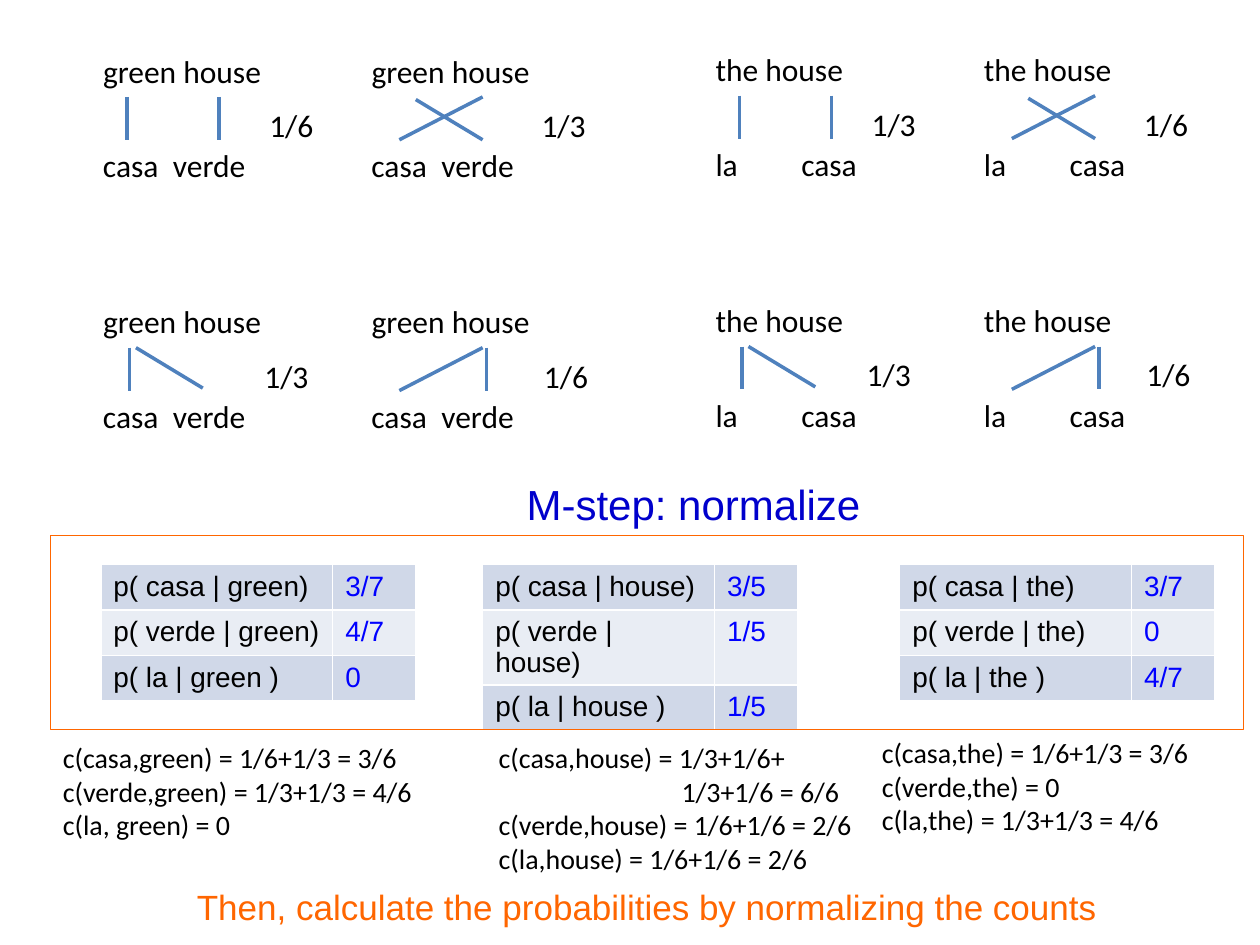
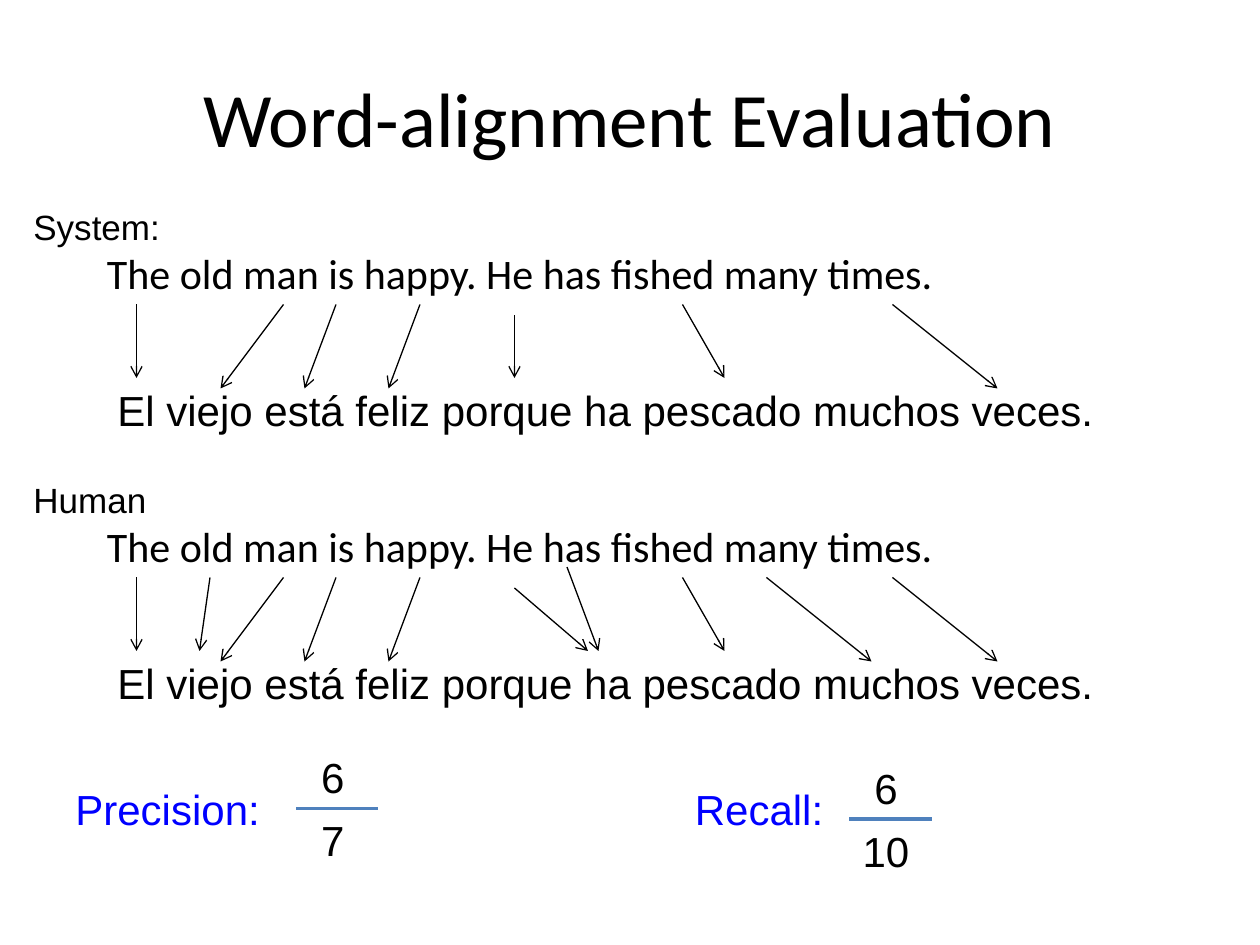
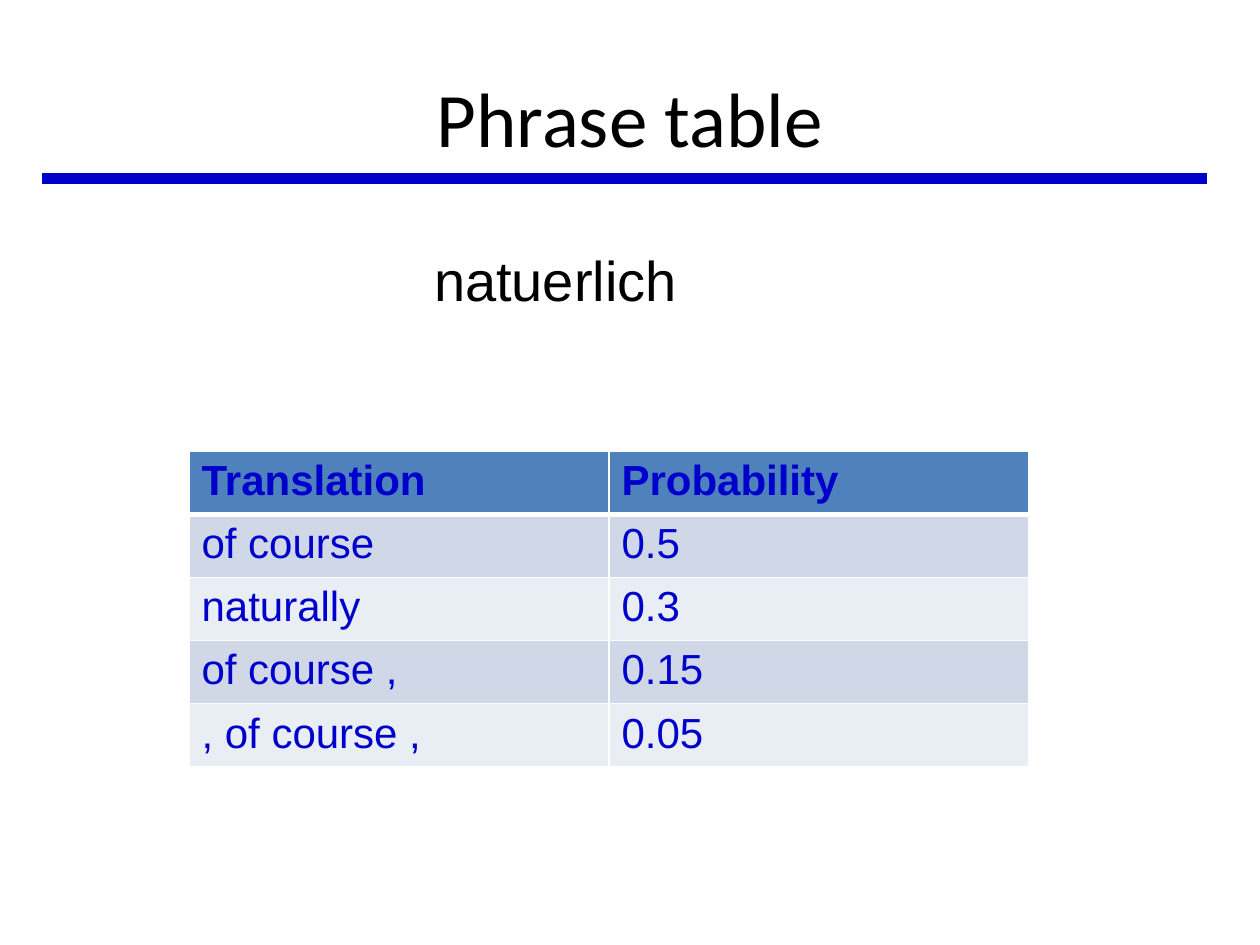
import dataclasses

import lxml.etree
import pptx
import pptx.dml.color
import pptx.enum.shapes
import pptx.enum.text
import pptx.oxml.ns
import pptx.util

Pt = pptx.util.Pt
Align = pptx.enum.text.PP_ALIGN
Anchor = pptx.enum.text.MSO_ANCHOR
qn = pptx.oxml.ns.qn


@dataclasses.dataclass(frozen=True)
class Theme:
    black: str = "000000"
    white: str = "FFFFFF"
    navy: str = "0000CC"
    blue: str = "0000FF"
    steel: str = "4F81BD"
    orange: str = "FF6600"
    bands: tuple = ("D0D8E8", "E9EDF4")
    sans: str = "Arial"
    body: str = "Calibri"
    title_size: int = 44
    term_size: int = 32
    large_size: int = 24
    label_size: int = 20
    word_size: int = 18
    small_size: int = 16


THEME = Theme()

# Each alignment: connecting lines, then the left offset of its probability
PARALLEL = [(20.9, 29.5, 20.9, 54), (73.4, 29.5, 73.4, 54)], 95
CROSSED = [(70.6, 29.5, 23, 54), (32.4, 31, 70.6, 54)], 97.2
FROM_FIRST = [(25.9, 29.5, 64.1, 52.6), (22.3, 29.5, 22.3, 54)], 92.2
FROM_SECOND = [(72.7, 29.5, 72.7, 54), (70.6, 29.5, 23, 54)], 98.6
ALIGNMENTS = [PARALLEL, CROSSED, FROM_FIRST, FROM_SECOND]

WORD_PAIRS = [
    dict(left=51.8, top=25.9, source="green house", source_width=110,
         target="casa\tverde", tab=40, shift=0,
         probabilities=["1/6", "1/3", "1/3", "1/6"]),
    dict(left=401.8, top=25.2, source="the house", source_width=88,
         target="la\tcasa", tab=49, shift=-5.8,
         probabilities=["1/3", "1/6", "1/3", "1/6"]),
]

PROBABILITY_TABLES = [
    (57.6, [("p( casa | green)", "3/7"), ("p( verde | green)", "4/7"),
            ("p( la | green )", "0")]),
    (275.8, [("p( casa | house)", "3/5"), ("p( verde | house)", "1/5"),
             ("p( la | house )", "1/5")]),
    (514.1, [("p( casa | the)", "3/7"), ("p( verde | the)", "0"),
             ("p( la | the )", "4/7")]),
]

COUNTS = [
    (28.8, 419.8, 224.6, "c(casa,green) = 1/6+1/3 = 3/6\n"
     "c(verde,green) = 1/3+1/3 = 4/6\nc(la, green) = 0"),
    (277.9, 419.8, 219, "c(casa,house) = 1/3+1/6+\n\t1/3+1/6 = 6/6\n"
     "c(verde,house) = 1/6+1/6 = 2/6\nc(la,house) = 1/6+1/6 = 2/6"),
    (496.8, 416.9, 192.2, "c(casa,the) = 1/6+1/3 = 3/6\n"
     "c(verde,the) = 0\nc(la,the) = 1/3+1/3 = 4/6"),
]

SHARED_ARROWS = [
    (78, 60, 78, 102), (162, 60, 126, 108), (192, 60, 174, 108),
    (240, 60, 222, 108), (390, 60, 414, 102), (510, 60, 570, 108),
]
SYSTEM_ARROWS = [(294, 66, 294, 102)]
HUMAN_ARROWS = [(294, 66, 336, 102), (120, 60, 114, 102),
                (324, 54, 342, 102), (438, 60, 498, 108)]

PHRASES = [("Translation", "Probability"), ("of course", "0.5"),
           ("naturally", "0.3"), ("of course ,", "0.15"),
           (", of course ,", "0.05")]


def rgb(color):
    return pptx.dml.color.RGBColor.from_string(color)


def write_text(frame, text, size=THEME.word_size, font=THEME.body,
               color=THEME.black, bold=False, align=Align.LEFT, tab=None):
    for index, line in enumerate(text.split("\n")):
        paragraph = frame.add_paragraph() if index else frame.paragraphs[0]
        paragraph.alignment = align
        run = paragraph.add_run()
        run.text = line
        run.font.size = Pt(size)
        run.font.name = font
        run.font.bold = bold
        run.font.color.rgb = rgb(color)
        if tab:
            properties = paragraph._p.get_or_add_pPr()
            tabs = lxml.etree.SubElement(properties, qn("a:tabLst"))
            lxml.etree.SubElement(tabs, qn("a:tab"), pos=str(Pt(tab)), algn="l")


def add_text(slide, text, left, top, width, height, wrap=False,
             anchor=Anchor.TOP, **text_format):
    shape = slide.shapes.add_textbox(Pt(left), Pt(top), Pt(width), Pt(height))
    shape.text_frame.word_wrap = wrap
    shape.text_frame.vertical_anchor = anchor
    write_text(shape.text_frame, text, **text_format)


def add_title(slide, text):
    add_text(slide, text, 36, 21.6, 648, 90, wrap=True, anchor=Anchor.MIDDLE,
             size=THEME.title_size, align=Align.CENTER)


def add_line(slide, points, left=0, top=0, color=THEME.steel, weight=2,
             arrow=False):
    x1, y1, x2, y2 = points
    connector = slide.shapes.add_connector(
        pptx.enum.shapes.MSO_CONNECTOR.STRAIGHT,
        Pt(left + x1), Pt(top + y1), Pt(left + x2), Pt(top + y2))
    connector.line.color.rgb = rgb(color)
    connector.line.width = Pt(weight)
    if arrow:
        lxml.etree.SubElement(connector.line._get_or_add_ln(),
                              qn("a:tailEnd"), type="arrow")
    lxml.etree.SubElement(connector._element.spPr, qn("a:effectLst"))


def add_frame(slide, left, top, width, height):
    shape = slide.shapes.add_shape(
        pptx.enum.shapes.MSO_SHAPE.RECTANGLE,
        Pt(left), Pt(top), Pt(width), Pt(height))
    shape.shadow.inherit = False
    shape.fill.background()
    shape.line.color.rgb = rgb(THEME.orange)
    shape.line.width = Pt(0.75)


def set_borders(cell, top=1, bottom=1):
    properties = cell._tc.get_or_add_tcPr()
    for side, weight in (("L", 1), ("R", 1), ("T", top), ("B", bottom)):
        line = lxml.etree.SubElement(properties, qn("a:ln" + side),
                                     w=str(Pt(weight)))
        fill = lxml.etree.SubElement(line, qn("a:solidFill"))
        lxml.etree.SubElement(fill, qn("a:srgbClr"), val=THEME.white)


def add_table(slide, rows, left, top, widths, row_height, size, colors,
              header=False):
    table = slide.shapes.add_table(
        len(rows), len(widths), Pt(left), Pt(top), Pt(sum(widths)),
        Pt(row_height * len(rows))).table
    table.first_row = header
    table.horz_banding = False
    for column, width in zip(table.columns, widths):
        column.width = Pt(width)
    for row_index, values in enumerate(rows):
        table.rows[row_index].height = Pt(row_height)
        is_header = header and row_index == 0
        below_header = header and row_index == 1
        band = THEME.bands[(row_index - header) % 2]
        for column_index, value in enumerate(values):
            cell = table.cell(row_index, column_index)
            set_borders(cell, top=3 if below_header else 1,
                        bottom=3 if is_header else 1)
            cell.fill.solid()
            cell.fill.fore_color.rgb = rgb(THEME.steel if is_header else band)
            write_text(cell.text_frame, value, size=size, font=THEME.sans,
                       color=colors[column_index], bold=is_header)


def add_word_pair(slide, pair):
    for index, (lines, probability_left) in enumerate(ALIGNMENTS):
        left = pair["left"] + 153.4 * (index % 2)
        top = pair["top"] + 143.3 * (index // 2)
        add_text(slide, pair["source"], left, top, pair["source_width"], 29)
        add_text(slide, pair["target"], left, top + 54, 97, 29, wrap=True,
                 tab=pair["tab"])
        for points in lines:
            add_line(slide, points, left, top)
        add_text(slide, pair["probabilities"][index],
                 left + probability_left + pair["shift"], top + 31, 40.3, 29)


def add_sentence_pair(slide, label, top, arrows):
    add_text(slide, label, 12, top, 88, 31.7, size=THEME.label_size,
             font=THEME.sans)
    add_text(slide, "The old man is happy. He has fished many times.",
             54, top + 24, 630, 60, wrap=True, size=THEME.large_size)
    add_text(slide, "El viejo está feliz porque ha pescado muchos veces.",
             60, top + 102, 600, 42, wrap=True, size=THEME.large_size,
             font=THEME.sans)
    for points in arrows:
        add_line(slide, points, top=top, color=THEME.black, weight=0.75,
                 arrow=True)


def add_score(slide, label, label_left, label_width, numerator, denominator,
              bar_left, bar_top):
    add_text(slide, label, label_left, 444, label_width, 36,
             size=THEME.large_size, font=THEME.sans, color=THEME.blue)
    add_line(slide, (0, 0, 47, 0), bar_left, bar_top)
    for number, top in ((numerator, bar_top - 36), (denominator, bar_top)):
        add_text(slide, number, bar_left, top, 42, 36, size=THEME.large_size,
                 font=THEME.sans, align=Align.CENTER)


def build_normalization(slide):
    for left, rows in PROBABILITY_TABLES:
        add_table(slide, rows, left, 322.6, (132.5, 47.5), 26,
                  THEME.small_size, (THEME.black, THEME.blue))
    for pair in WORD_PAIRS:
        add_word_pair(slide, pair)
    add_frame(slide, 28.8, 306, 681.8, 111)
    for left, top, width, text in COUNTS:
        height = 7.2 + 19.5 * len(text.split("\n"))
        add_text(slide, text, left, top, width, height, wrap=True,
                 size=THEME.small_size, tab=104.5)
    add_text(slide, "Then, calculate the probabilities by normalizing the counts",
             103, 502.6, 533.5, 31.7, size=THEME.label_size, font=THEME.sans,
             color=THEME.orange, align=Align.CENTER)
    add_text(slide, "M-step: normalize", 84.2, 270, 624.2, 36, wrap=True,
             size=THEME.large_size, font=THEME.sans, color=THEME.navy,
             align=Align.CENTER)


def build_evaluation(slide):
    add_title(slide, "Word-alignment Evaluation")
    add_sentence_pair(slide, "System:", 114, SHARED_ARROWS + SYSTEM_ARROWS)
    add_sentence_pair(slide, "Human", 270, SHARED_ARROWS + HUMAN_ARROWS)
    add_score(slide, "Precision:", 36, 121, "6", "7", 169.2, 462)
    add_score(slide, "Recall:", 390, 88.6, "6", "10", 485.3, 468)


def build_phrase_table(slide):
    add_title(slide, "Phrase table")
    add_line(slide, (24, 102, 690, 102), color=THEME.navy, weight=6)
    add_text(slide, "natuerlich", 240.5, 136.8, 154, 46, size=THEME.term_size,
             font=THEME.sans, align=Align.CENTER)
    add_table(slide, PHRASES, 108, 258, (240, 240), 36, THEME.large_size,
              (THEME.navy, THEME.navy), header=True)


def main():
    presentation = pptx.Presentation()
    presentation.slide_width = Pt(720)
    presentation.slide_height = Pt(540)
    for build in (build_normalization, build_evaluation, build_phrase_table):
        build(presentation.slides.add_slide(presentation.slide_layouts[6]))
    presentation.save("out.pptx")


if __name__ == "__main__":
    main()
